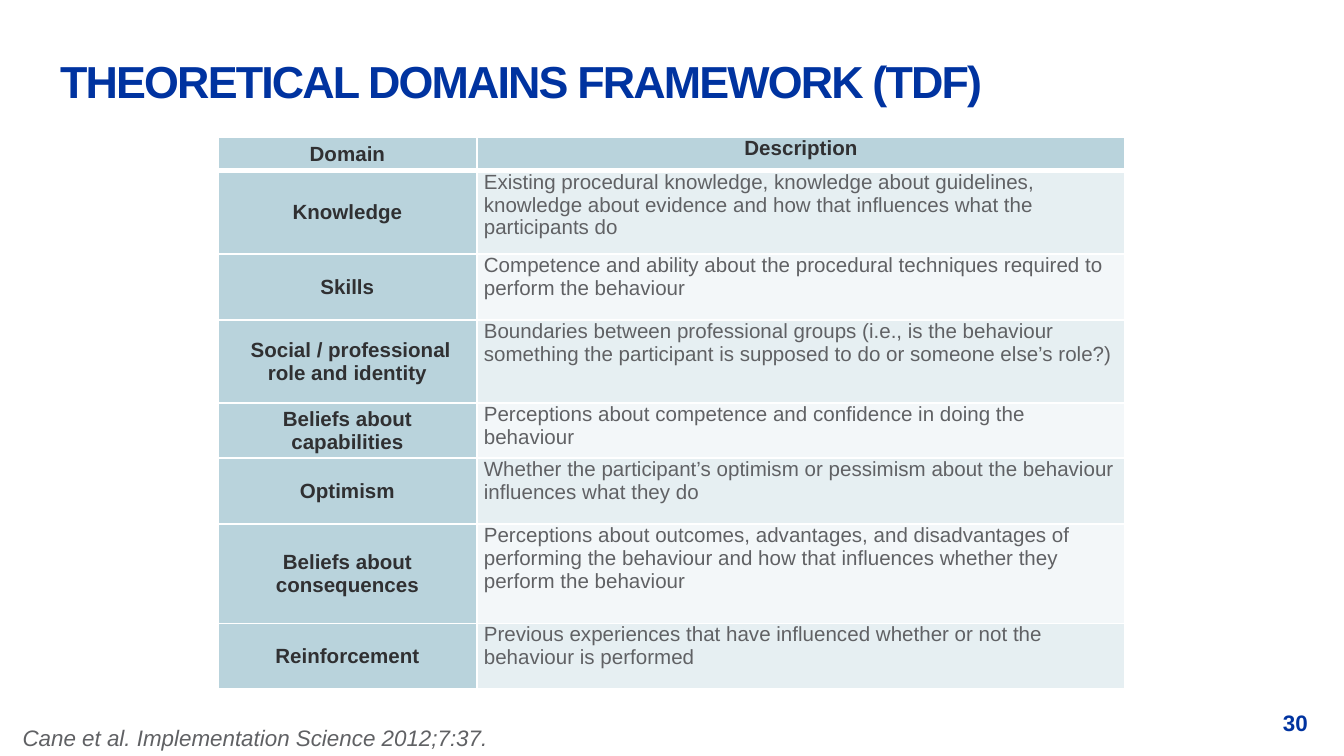
from dataclasses import dataclass

from lxml.etree import SubElement
from pptx import Presentation
from pptx.dml.color import RGBColor
from pptx.enum.text import MSO_ANCHOR, PP_ALIGN
from pptx.oxml.ns import qn
from pptx.util import Inches, Pt


@dataclass(frozen=True)
class Theme:
    font: str = "Arial"
    navy: str = "0033A0"
    dark: str = "303032"
    grey: str = "606164"
    white: str = "FFFFFF"
    domain_fill: str = "B9D3DC"
    bands: tuple = ("E6EFF2", "F3F7F9")
    title_size: int = 24
    note_size: int = 12
    table_size: int = 11


HEADINGS = ("Domain", "Description")
DOMAINS = [
    # domain, description, row height
    ("Knowledge", "Existing procedural knowledge, knowledge about guidelines, knowledge about "
     "evidence and how that influences what the participants do", 0.62),
    ("Skills", "Competence and ability about the procedural techniques required to perform "
     "the behaviour", 0.49),
    ("Social / professional role and identity", "Boundaries between professional groups (i.e., is "
     "the behaviour something the participant is supposed to do or someone else’s role?)", 0.62),
    ("Beliefs about capabilities", "Perceptions about competence and confidence in doing the "
     "behaviour", 0.41),
    ("Optimism", "Whether the participant’s optimism or pessimism about the behaviour influences "
     "what they do", 0.49),
    ("Beliefs about consequences", "Perceptions about outcomes, advantages, and disadvantages of "
     "performing the behaviour and how that influences whether they perform the behaviour", 0.74),
    ("Reinforcement", "Previous experiences that have influenced whether or not the behaviour is "
     "performed", 0.49),
]


class SlideBuilder:
    def __init__(self, slide, theme):
        self.slide = slide
        self.theme = theme

    def style(self, paragraph, size, color, bold=False, italic=False):
        for run in paragraph.runs:
            font = run.font
            font.name, font.size = self.theme.font, Pt(size)
            font.bold, font.italic = bold, italic
            font.color.rgb = RGBColor.from_string(color)

    def text(self, text, left, top, width, height, size, color,
             align=PP_ALIGN.LEFT, anchor=MSO_ANCHOR.TOP, **emphasis):
        box = self.slide.shapes.add_textbox(*map(Inches, (left, top, width, height)))
        frame = box.text_frame
        frame.word_wrap = True
        frame.vertical_anchor = anchor
        frame.text = text
        paragraph = frame.paragraphs[0]
        paragraph.alignment = align
        self.style(paragraph, size, color, **emphasis)
        return paragraph

    def borders(self, cell, bottom=1):
        properties = cell._tc.get_or_add_tcPr()
        widths = {"a:lnL": 1, "a:lnR": 1, "a:lnT": 1, "a:lnB": bottom}
        for position, (tag, width) in enumerate(widths.items()):
            line = SubElement(properties, qn(tag), w=str(Pt(width)))
            fill = SubElement(line, qn("a:solidFill"))
            SubElement(fill, qn("a:srgbClr"), val=self.theme.white)
            properties.insert(position, line)

    def cell(self, cell, text, fill, heading, middle, bottom=1):
        cell.margin_left = cell.margin_right = Inches(0.05)
        cell.margin_top = cell.margin_bottom = 0
        cell.vertical_anchor = MSO_ANCHOR.MIDDLE if middle else MSO_ANCHOR.TOP
        cell.fill.solid()
        cell.fill.fore_color.rgb = RGBColor.from_string(fill)
        self.borders(cell, bottom)
        cell.text_frame.text = text
        paragraph = cell.text_frame.paragraphs[0]
        paragraph.alignment = PP_ALIGN.CENTER if heading else PP_ALIGN.LEFT
        color = self.theme.dark if heading else self.theme.grey
        self.style(paragraph, self.theme.table_size, color, bold=heading)
        return paragraph

    def table(self, left, top, column_widths, header_height, headings, rows):
        heights = [header_height] + [height for _, _, height in rows]
        table = self.slide.shapes.add_table(
            len(heights), len(column_widths), Inches(left), Inches(top),
            Inches(sum(column_widths)), Inches(sum(heights))).table
        table.horz_banding = False
        for column, width in zip(table.columns, column_widths):
            column.width = Inches(width)
        for row, height in zip(table.rows, heights):
            row.height = Inches(height)
        fill, bands = self.theme.domain_fill, self.theme.bands
        for index, heading in enumerate(headings):
            self.cell(table.cell(0, index), heading, fill, True, index == 0, bottom=3)
        for index, (domain, description, _) in enumerate(rows):
            self.cell(table.cell(index + 1, 0), domain, fill, True, True)
            self.cell(table.cell(index + 1, 1), description, bands[index % 2], False, False)
        return table


def main():
    # Widescreen slide, 16:9
    presentation = Presentation()
    presentation.slide_width = Inches(10)
    presentation.slide_height = Inches(10 * 9 / 16)
    slide = presentation.slides.add_slide(presentation.slide_layouts[6])
    theme = Theme()
    builder = SlideBuilder(slide, theme)

    # Domain table, with a slight first-line indent on the role domain
    table = builder.table(1.62, 1.02, (1.93, 4.82), 0.25, HEADINGS, DOMAINS)
    role = table.cell(3, 0).text_frame.paragraphs[0]
    role._p.get_or_add_pPr().set("indent", str(Inches(0.05)))

    # Citation
    builder.text("Cane et al. Implementation Science 2012;7:37.", 0.07, 5.34, 5.4, 0.3,
                 theme.note_size, theme.grey, italic=True)

    # Title with tightened letter spacing
    title = builder.text("THEORETICAL DOMAINS FRAMEWORK (TDF)", 0.35, 0.43, 8.5, 0.59,
                         theme.title_size, theme.navy, bold=True)
    title.line_spacing = 0.8
    title.runs[0].font._element.set("spc", "-100")

    # Slide number
    builder.text("30", 9.06, 5.18, 0.77, 0.4, theme.note_size, theme.navy,
                 align=PP_ALIGN.RIGHT, anchor=MSO_ANCHOR.MIDDLE, bold=True)

    presentation.save("out.pptx")


if __name__ == "__main__":
    main()
